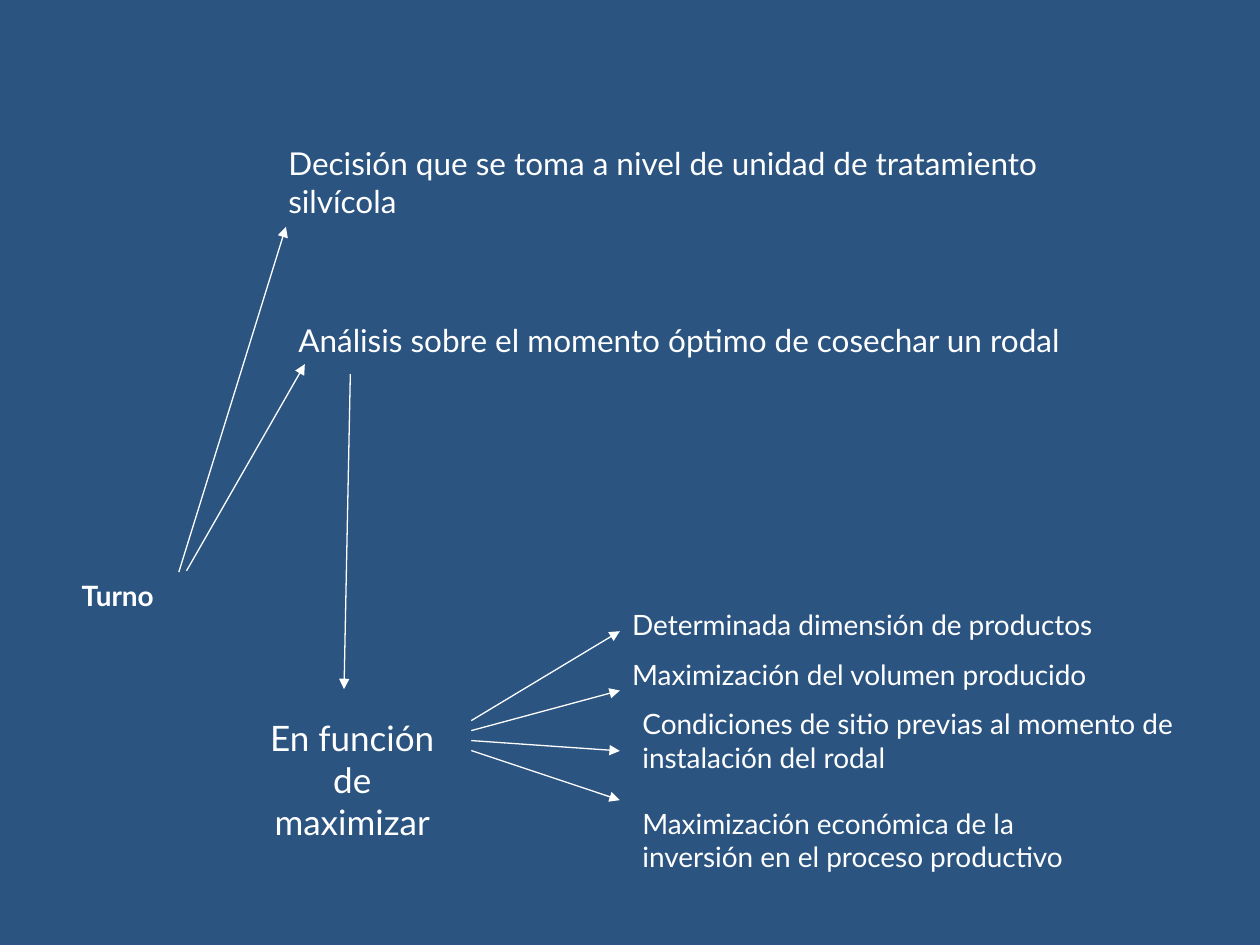
import dataclasses

import lxml.etree
import pptx
import pptx.dml.color
import pptx.enum.shapes
import pptx.enum.text
import pptx.oxml.ns
import pptx.util

Pt = pptx.util.Pt
Align = pptx.enum.text.PP_ALIGN
Anchor = pptx.enum.text.MSO_ANCHOR


@dataclasses.dataclass(frozen=True)
class Theme:
    font: str = "Lato"
    background: str = "2B5481"
    ink: str = "FFFFFF"
    small: float = 16
    medium: float = 18
    large: float = 20
    line_width: float = 0.75


def color(value):
    return pptx.dml.color.RGBColor.from_string(value)


def write_text(para, text, *, font, size, ink, bold=False, align=Align.LEFT):
    para.alignment = align
    span = para.add_run()
    span.text = text
    span.font.name = font
    span.font.size = Pt(size)
    span.font.bold = bold
    span.font.color.rgb = color(ink)


class SlideBuilder:
    def __init__(self, deck, theme):
        self.theme = theme
        self.page = deck.slides.add_slide(deck.slide_layouts[6])
        fill = self.page.background.fill
        fill.solid()
        fill.fore_color.rgb = color(theme.background)

    def add_text(self, text, left, top, width, height, *, size,
                 anchor=Anchor.TOP, wrap=True, **style):
        box = self.page.shapes.add_textbox(Pt(left), Pt(top), Pt(width), Pt(height))
        frame = box.text_frame
        frame.word_wrap = wrap
        frame.auto_size = pptx.enum.text.MSO_AUTO_SIZE.SHAPE_TO_FIT_TEXT
        frame.vertical_anchor = anchor
        write_text(frame.paragraphs[0], text, font=self.theme.font, size=size,
                   ink=self.theme.ink, **style)

    def add_arrow(self, start, end):
        arrow = self.page.shapes.add_connector(
            pptx.enum.shapes.MSO_CONNECTOR.STRAIGHT,
            *(Pt(value) for value in (*start, *end)))
        arrow.line.color.rgb = color(self.theme.ink)
        arrow.line.width = Pt(self.theme.line_width)
        qualified = pptx.oxml.ns.qn
        lxml.etree.SubElement(arrow.line._get_or_add_ln(),
                              qualified("a:tailEnd"), type="triangle")
        lxml.etree.SubElement(arrow._element.spPr, qualified("a:effectLst"))


def main():
    theme = Theme()
    deck = pptx.Presentation()
    deck.slide_width, deck.slide_height = Pt(720), Pt(540)
    slide = SlideBuilder(deck, theme)

    slide.add_text("Turno", 39.6, 326.9, 62, 26.6, size=theme.small,
                   anchor=Anchor.MIDDLE, wrap=False, bold=True)
    slide.add_text("Decisión que se toma a nivel de unidad de tratamiento silvícola",
                   157.7, 78.5, 495.4, 51, size=theme.medium, anchor=Anchor.MIDDLE)
    slide.add_text("Análisis sobre el momento óptimo de cosechar un rodal",
                   163.4, 180, 464.4, 28.8, size=theme.medium,
                   anchor=Anchor.MIDDLE, wrap=False)
    slide.add_text("En función de maximizar", 139, 406, 124.6, 80,
                   size=theme.large, align=Align.CENTER)

    goals = [
        ("Determinada dimensión de productos", 354.2, 343.4, 317.5, 26.6),
        ("Maximización del volumen producido", 354.2, 372.2, 365.8, 26.6),
        ("Condiciones de sitio previas al momento de instalación del rodal",
         360, 400.3, 334.8, 46),
        ("Maximización económica de la inversión en el proceso productivo",
         360, 457.2, 283.7, 46),
    ]
    for goal in goals:
        slide.add_text(*goal, size=theme.small)

    goal_arrow_ends = [360.7, 394.6, 429.1, 457.2]
    for index, end_y in enumerate(goal_arrow_ends):
        slide.add_arrow((269.3, 411.8 + 5.7 * index), (354.2, end_y))

    turno_to_decision = ((102.2, 326.9), (163.4, 129.6))
    turno_to_analysis = ((106.6, 326.2), (174.2, 208.1))
    analysis_to_function = ((200.2, 213.8), (196.6, 393.8))
    for start, end in (turno_to_decision, turno_to_analysis, analysis_to_function):
        slide.add_arrow(start, end)

    deck.save("out.pptx")


if __name__ == "__main__":
    main()
